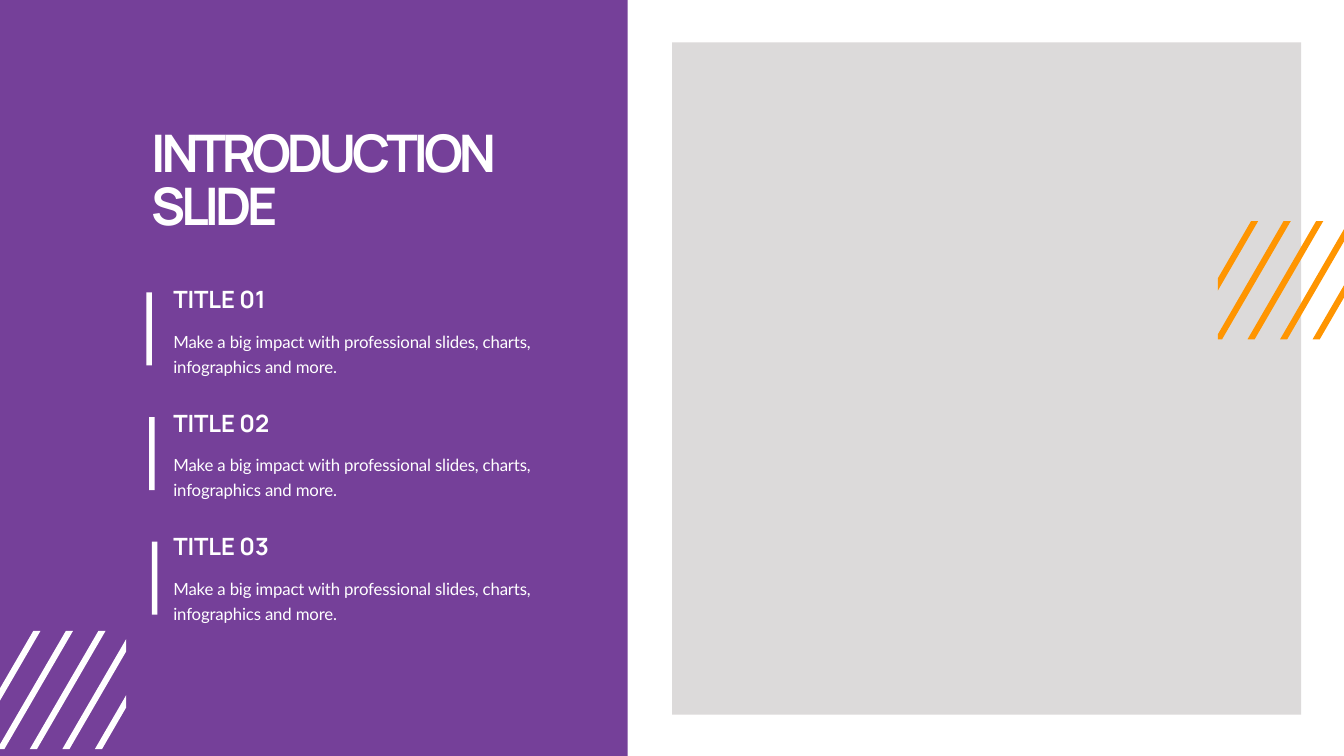
from dataclasses import dataclass

from pptx import Presentation
from pptx.dml.color import RGBColor
from pptx.enum.shapes import MSO_SHAPE as Shape
from pptx.enum.text import MSO_ANCHOR as Anchor, MSO_AUTO_SIZE as AutoSize
from pptx.util import Cm, Pt

Point = tuple[float, float]


@dataclass(frozen=True)
class Theme:
    purple: str = "754099"
    grey: str = "DCDADA"
    orange: str = "FF9501"
    white: str = "FFFFFF"
    heading_font: str = "Manrope"
    body_font: str = "Lato"
    title_size: float = 37
    heading_size: float = 17
    body_size: float = 12


@dataclass(frozen=True)
class Block:
    left: float
    top: float
    width: float
    height: float
    color: str


@dataclass(frozen=True)
class Hatch:
    left: float
    top: float
    color: str


THEME = Theme()
SLIDE_WIDTH, SLIDE_HEIGHT = 33.87, 19.05

PANELS = [
    Block(0, 0, 15.82, SLIDE_HEIGHT, THEME.purple),
    Block(16.94, 1.07, 15.85, 16.94, THEME.grey),
]

# Hatch geometry: slanted stripes cut off at the sides of a box
HATCH_WIDTH, HATCH_HEIGHT = 3.18, 2.98
STRIPE_COUNT, STRIPE_WIDTH, STRIPE_PITCH = 5, 0.18, 0.82
FIRST_STRIPE, STRIPE_SLANT = 0.84, 1.73
HATCHES = [
    Hatch(0, 15.9, THEME.white),
    Hatch(SLIDE_WIDTH - HATCH_WIDTH, 5.57, THEME.orange),
]

ITEM_HEADINGS = ["TITLE 01", "TITLE 02", "TITLE 03"]
ITEM_BODY = ("Make a big impact with professional slides, charts, "
             "infographics and more.")
ITEM_LEFT, ITEM_WIDTH, ITEM_PITCH = 4.12, 10.16, 3.11


def paint(shape, color: str) -> None:
    shape.shadow.inherit = False
    shape.fill.solid()
    shape.fill.fore_color.rgb = RGBColor.from_string(color)
    shape.line.fill.background()


def add_block(page, block: Block) -> None:
    shape = page.shapes.add_shape(
        Shape.RECTANGLE, Cm(block.left), Cm(block.top),
        Cm(block.width), Cm(block.height))
    paint(shape, block.color)


def clip(points: list[Point], limit: float, side: int) -> list[Point]:
    """Keep the part right (side 1) or left (side -1) of x = limit."""
    kept: list[Point] = []
    for (x1, y1), (x2, y2) in zip(points, points[1:] + points[:1]):
        inside = side * (x1 - limit) >= 0
        if inside:
            kept.append((x1, y1))
        if inside != (side * (x2 - limit) >= 0):
            kept.append((limit, y1 + (y2 - y1) * (limit - x1) / (x2 - x1)))
    return kept


def stripe(index: int) -> list[Point]:
    top = FIRST_STRIPE + index * STRIPE_PITCH
    bottom = top - STRIPE_SLANT
    outline = [(top, 0), (top + STRIPE_WIDTH, 0),
               (bottom + STRIPE_WIDTH, HATCH_HEIGHT), (bottom, HATCH_HEIGHT)]
    return clip(clip(outline, 0, 1), HATCH_WIDTH, -1)


def add_hatch(page, hatch: Hatch) -> None:
    builder = None
    for index in range(STRIPE_COUNT):
        first, *rest = [(Cm(hatch.left + x), Cm(hatch.top + y))
                        for x, y in stripe(index)]
        if builder is None:
            builder = page.shapes.build_freeform(*first)
        else:
            builder.move_to(*first)
        builder.add_line_segments(rest, close=True)
    paint(builder.convert_to_shape(), hatch.color)


def add_text(page, text: str, *, left: float, top: float, width: float,
             height: float, font: str, size: float, bold: bool = False,
             spacing: float = -0.1, line_height: float | None = None,
             anchor: Anchor = Anchor.TOP) -> None:
    box = page.shapes.add_textbox(Cm(left), Cm(top), Cm(width), Cm(height))
    frame = box.text_frame
    frame.word_wrap = True
    frame.auto_size = AutoSize.SHAPE_TO_FIT_TEXT
    frame.vertical_anchor = anchor
    para = frame.paragraphs[0]
    if line_height is not None:
        para.line_spacing = Pt(line_height)
    span = para.add_run()
    span.text = text
    span.font.name = font
    span.font.size = Pt(size)
    span.font.bold = bold
    span.font.color.rgb = RGBColor.from_string(THEME.white)
    span._r.get_or_add_rPr().set("spc", str(round(spacing * 100)))


def add_item(page, index: int, heading: str) -> None:
    offset = index * ITEM_PITCH
    add_block(page, Block(3.69 + index * 0.07, 7.37 + index * 3.14,
                          0.14, 1.84, THEME.white))
    add_text(page, heading, left=ITEM_LEFT, top=7.04 + offset,
             width=ITEM_WIDTH, height=0.99, font=THEME.heading_font,
             size=THEME.heading_size, bold=True, anchor=Anchor.BOTTOM)
    add_text(page, ITEM_BODY, left=ITEM_LEFT, top=8.1 + offset,
             width=ITEM_WIDTH, height=1.5, font=THEME.body_font,
             size=THEME.body_size, line_height=18)


def main() -> None:
    deck = Presentation()
    deck.slide_width, deck.slide_height = Cm(SLIDE_WIDTH), Cm(SLIDE_HEIGHT)
    page = deck.slides.add_slide(deck.slide_layouts[6])

    # Background panels and hatched accents
    for panel in PANELS:
        add_block(page, panel)
    for hatch in HATCHES:
        add_hatch(page, hatch)

    # Title
    add_text(page, "INTRODUCTION SLIDE", left=3.56, top=3.07, width=10.72,
             height=3, font=THEME.heading_font, size=THEME.title_size,
             bold=True, spacing=-2.9, line_height=38, anchor=Anchor.BOTTOM)

    # Items with their marker bars
    for index, heading in enumerate(ITEM_HEADINGS):
        add_item(page, index, heading)

    deck.save("out.pptx")


if __name__ == "__main__":
    main()
